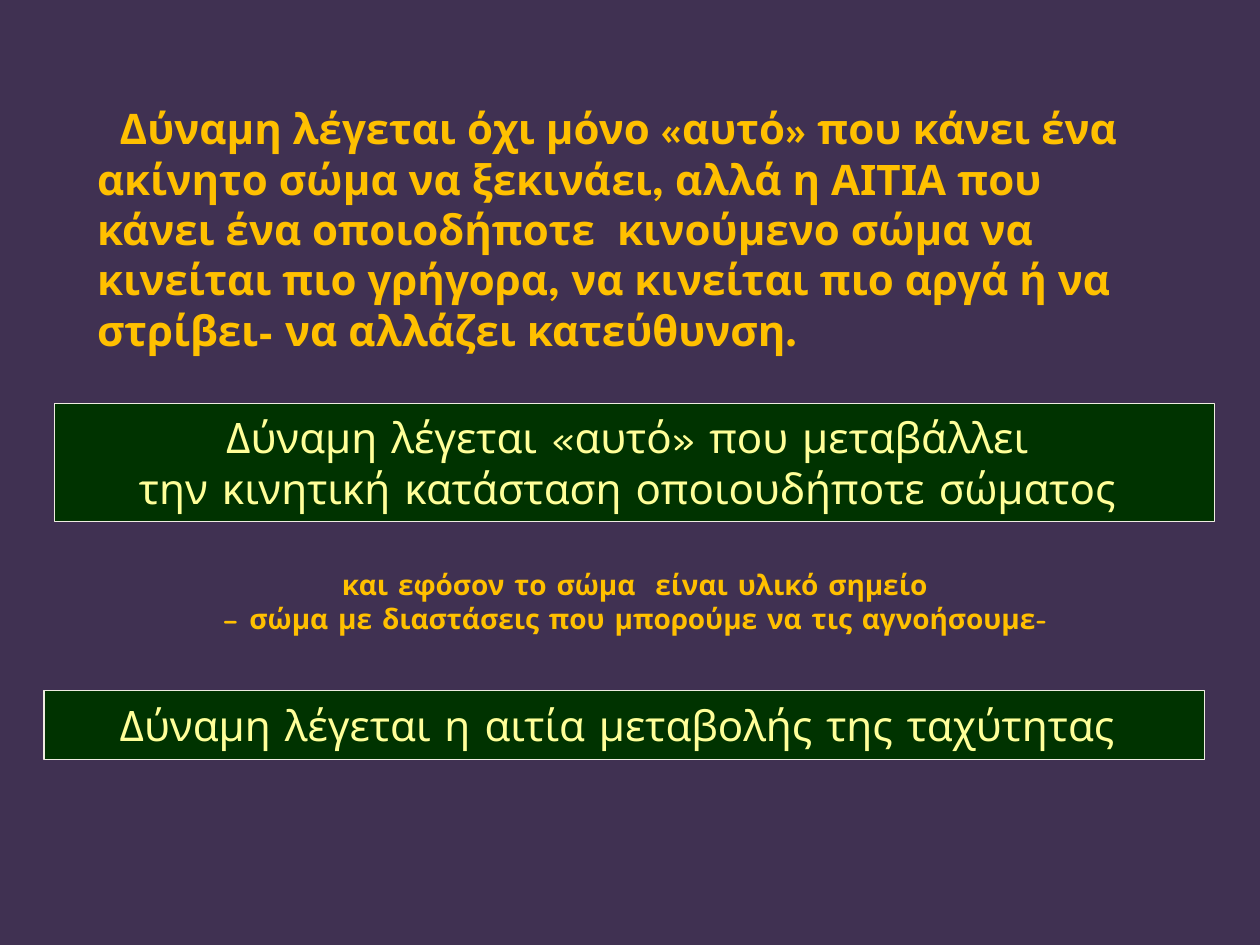
from pptx import Presentation
from pptx.dml.color import RGBColor
from pptx.enum.shapes import MSO_SHAPE
from pptx.enum.text import MSO_ANCHOR, MSO_AUTO_SIZE, PP_ALIGN
from pptx.util import Inches, Pt

COLORS = {
    "background": "403152",
    "panel": "003300",
    "border": "EEECE1",
    "panel_text": "FFFF99",
    "accent": "FFC000",
}
TITLE_FONT = "League Spartan"
BODY_FONT = "Comic Neue"

INTRODUCTION = (
    "Δύναμη λέγεται όχι μόνο «αυτό» που κάνει ένα ακίνητο σώμα να ξεκινάει, "
    "αλλά η ΑΙΤΙΑ που κάνει ένα οποιοδήποτε  κινούμενο σώμα να κινείται πιο "
    "γρήγορα, να κινείται πιο αργά ή να στρίβει- να αλλάζει κατεύθυνση."
)
DEFINITIONS = [
    ("Δύναμη λέγεται «αυτό» που μεταβάλλει \n"
     "την κινητική κατάσταση οποιουδήποτε σώματος ", (0.43, 3.2, 9.21, 0.94)),
    ("Δύναμη λέγεται η αιτία μεταβολής της ταχύτητας ", (0.35, 5.48, 9.21, 0.55)),
]
CONDITION = (
    " και εφόσον το σώμα  είναι υλικό σημείο\n"
    " – σώμα με διαστάσεις που μπορούμε να τις αγνοήσουμε-"
)


def color(name):
    return RGBColor.from_string(COLORS[name])


def place(shape, box):
    shape.left, shape.top, shape.width, shape.height = map(Inches, box)


def write(shape, text, font_name, size, color_name, bold=False, align=PP_ALIGN.CENTER):
    frame = shape.text_frame
    frame.word_wrap = True
    frame.auto_size = MSO_AUTO_SIZE.NONE
    frame.vertical_anchor = MSO_ANCHOR.MIDDLE
    paragraph = frame.paragraphs[0]
    paragraph.text = text
    paragraph.alignment = align
    paragraph.font.name = font_name
    paragraph.font.size = Pt(size)
    paragraph.font.bold = bold
    paragraph.font.color.rgb = color(color_name)
    return paragraph


def add_definition(slide, text, box):
    panel = slide.shapes.add_shape(MSO_SHAPE.RECTANGLE, *map(Inches, box))
    panel.shadow.inherit = False
    panel.fill.solid()
    panel.fill.fore_color.rgb = color("panel")
    panel.line.color.rgb = color("border")
    panel.line.width = Pt(0.75)
    write(panel, text, BODY_FONT, 24, "panel_text")


def main():
    presentation = Presentation()
    presentation.slide_width = Inches(10)
    presentation.slide_height = Inches(7.5)
    slide = presentation.slides.add_slide(presentation.slide_layouts[5])
    slide.background.fill.solid()
    slide.background.fill.fore_color.rgb = color("background")

    title = slide.shapes.title
    place(title, (0.67, 0.99, 8.66, 1.65))
    paragraph = write(title, INTRODUCTION, TITLE_FONT, 24, "accent", True, PP_ALIGN.LEFT)
    paragraph._p.get_or_add_pPr().set("indent", str(Inches(0.18)))

    for text, box in DEFINITIONS:
        add_definition(slide, text, box)

    condition = slide.shapes.add_textbox(*map(Inches, (0, 4.46, 10, 0.63)))
    write(condition, CONDITION, BODY_FONT, 16, "accent", True)

    presentation.save("out.pptx")


if __name__ == "__main__":
    main()
